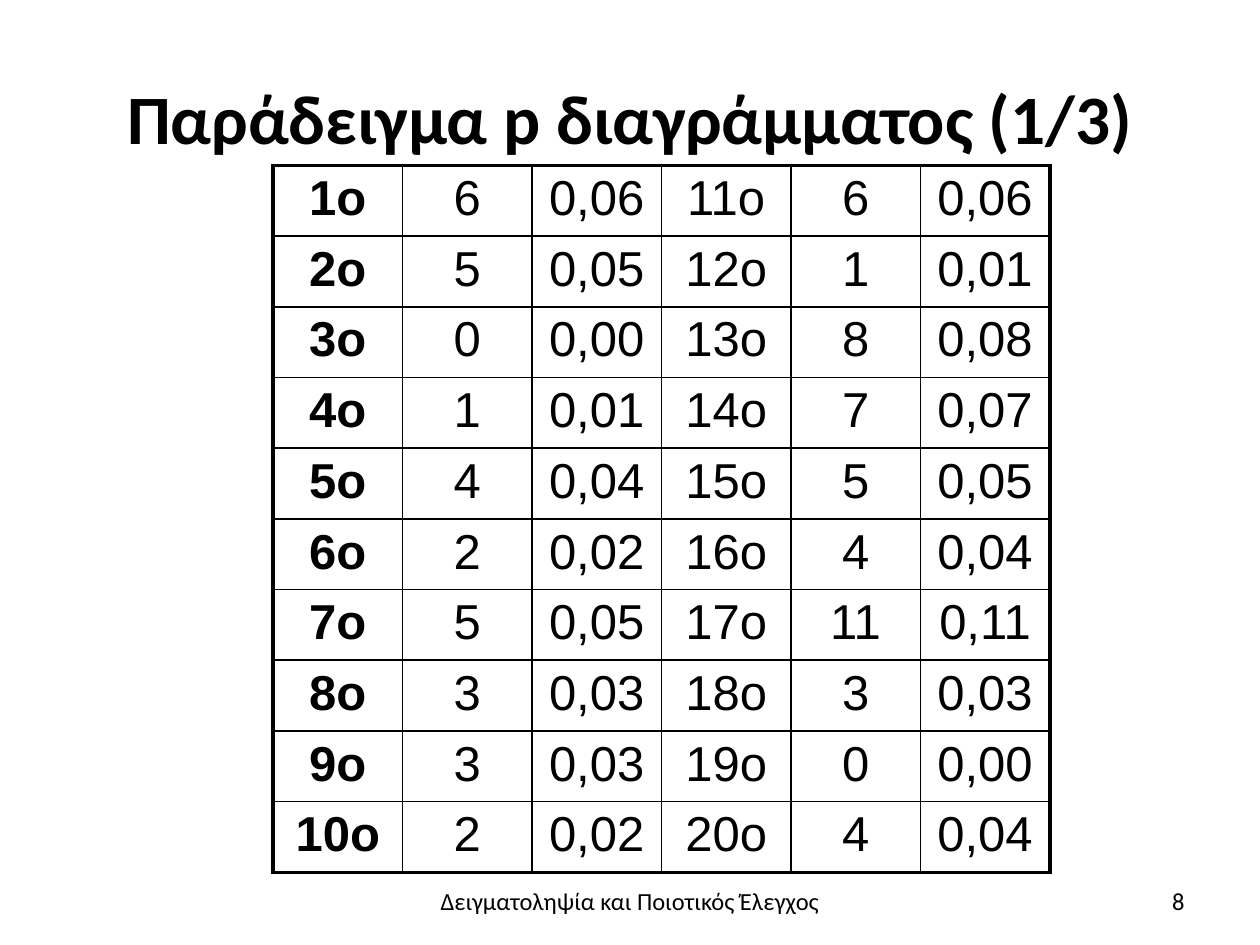
from dataclasses import dataclass

from lxml.etree import SubElement
from pptx import Presentation
from pptx.dml.color import RGBColor
from pptx.enum.text import MSO_ANCHOR, PP_ALIGN
from pptx.oxml.ns import qn
from pptx.util import Pt


@dataclass(frozen=True)
class Theme:
    ink: str = "000000"
    paper: str = "FFFFFF"
    heading_font: str = "Calibri"
    table_font: str = "Arial"
    title_size: float = 39.6
    table_size: float = 28
    footer_size: float = 14
    outer_line: float = 2.25
    inner_line: float = 1


THEME = Theme()
SAMPLE_SIZE = 100
DEFECTS = [6, 5, 0, 1, 4, 2, 5, 3, 3, 2, 6, 1, 8, 7, 5, 4, 11, 3, 0, 4]


def write_text(tf, text, *, size, font=THEME.heading_font, bold=False,
               align=PP_ALIGN.CENTER):
    p = tf.paragraphs[0]
    p.alignment = align
    r = p.add_run()
    r.text = text
    r.font.name = font
    r.font.size = Pt(size)
    r.font.bold = bold
    r.font.color.rgb = RGBColor.from_string(THEME.ink)


def add_text(s, box, text, **fmt):
    sp = s.shapes.add_textbox(*map(Pt, box))
    tf = sp.text_frame
    tf.word_wrap = True
    tf.vertical_anchor = MSO_ANCHOR.MIDDLE
    write_text(tf, text, **fmt)


def set_borders(cell, widths):
    tc_pr = cell._tc.get_or_add_tcPr()
    for i, (side, width) in enumerate(widths.items()):
        ln = SubElement(tc_pr, qn(f"a:{side}"), w=str(Pt(width)))
        fill = SubElement(ln, qn("a:solidFill"))
        SubElement(fill, qn("a:srgbClr"), val=THEME.ink)
        tc_pr.remove(ln)
        tc_pr.insert(i, ln)


def sample_cells(number):
    count = DEFECTS[number - 1]
    share = f"{count / SAMPLE_SIZE:.2f}".replace(".", ",")
    return [f"{number}ο", str(count), share]


def add_samples(s, box):
    half = len(DEFECTS) // 2
    rows = [sample_cells(n) + sample_cells(n + half) for n in range(1, half + 1)]
    n_rows, n_cols = len(rows), len(rows[0])
    left, top, width, height = box
    frame = s.shapes.add_table(n_rows, n_cols, *map(Pt, box))
    table = frame.table
    table.first_row = table.horz_banding = False
    for col in table.columns:
        col.width = Pt(width / n_cols)
    for row in table.rows:
        row.height = Pt(height / n_rows)

    def line(is_edge):
        return THEME.outer_line if is_edge else THEME.inner_line

    for i, values in enumerate(rows):
        for j, value in enumerate(values):
            cell = table.cell(i, j)
            cell.margin_top = cell.margin_bottom = Pt(3.4)
            cell.fill.solid()
            cell.fill.fore_color.rgb = RGBColor.from_string(THEME.paper)
            write_text(cell.text_frame, value, size=THEME.table_size,
                       font=THEME.table_font, bold=j == 0)
            set_borders(cell, {"lnL": line(j == 0),
                               "lnR": line(j == n_cols - 1),
                               "lnT": line(i == 0),
                               "lnB": line(i == n_rows - 1)})


def add_footer(s, box, text, number):
    left, top, width, height = box
    add_text(s, (left + (width - 357) / 2, top, 357, height), text,
             size=THEME.footer_size)
    add_text(s, (left + width - 168, top, 168, height), number,
             size=THEME.footer_size, align=PP_ALIGN.RIGHT)


def main():
    prs = Presentation()
    prs.slide_width, prs.slide_height = Pt(720), Pt(540)
    s = prs.slides.add_slide(prs.slide_layouts[6])
    add_text(s, (36, 21.6, 648, 90), "Παράδειγμα p διαγράμματος (1/3)",
             size=THEME.title_size, bold=True)
    add_samples(s, (156, 94.5, 444, 391))
    add_footer(s, (36, 500.5, 648, 28.8),
               "Δειγματοληψία και Ποιοτικός Έλεγχος", "8")
    prs.save("out.pptx")


if __name__ == "__main__":
    main()
